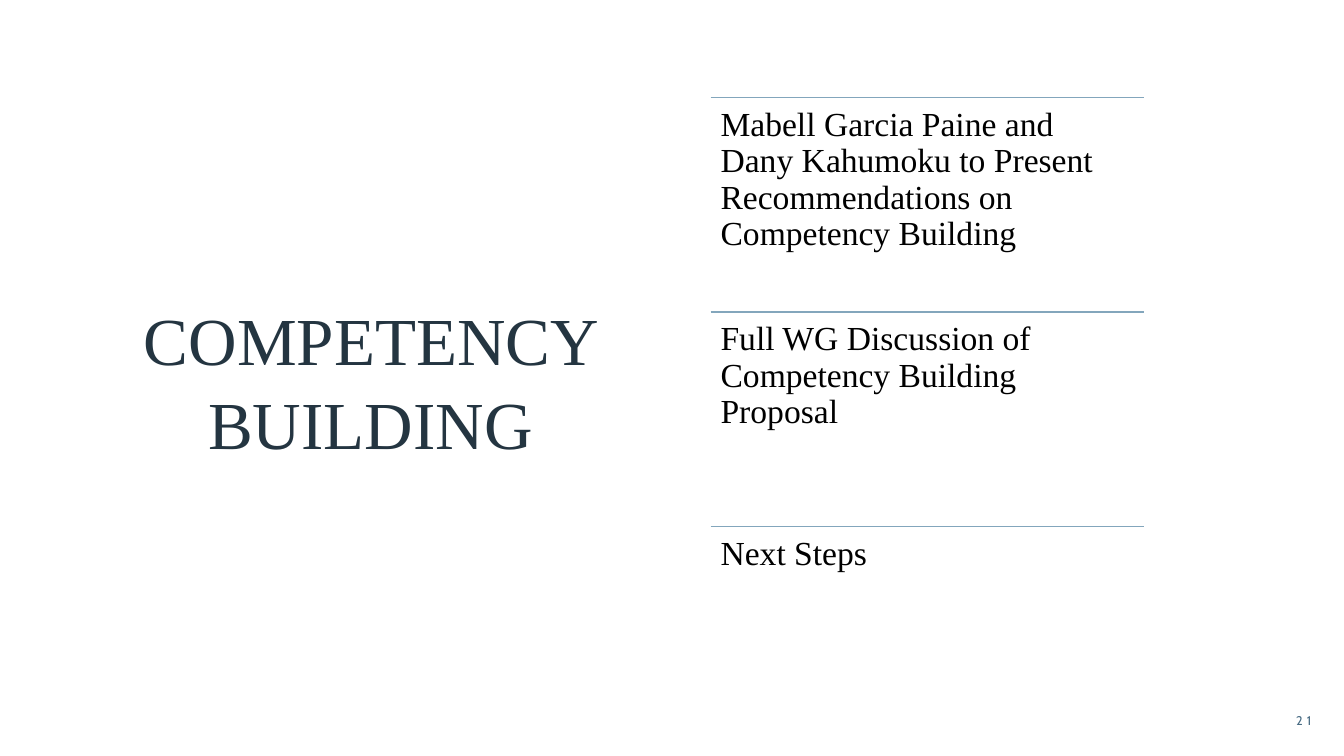
from pptx import Presentation
from pptx.dml.color import RGBColor
from pptx.enum.shapes import MSO_CONNECTOR
from pptx.enum.text import MSO_ANCHOR, MSO_AUTO_SIZE, PP_ALIGN
from pptx.oxml.ns import qn
from pptx.util import Cm, Pt
from lxml import etree

LINE = MSO_CONNECTOR.STRAIGHT
TOP, MIDDLE = MSO_ANCHOR.TOP, MSO_ANCHOR.MIDDLE
LEFT, CENTER, RIGHT = PP_ALIGN.LEFT, PP_ALIGN.CENTER, PP_ALIGN.RIGHT
NO_FIT = MSO_AUTO_SIZE.NONE
SERIF, SANS = "Times New Roman", "Cabin"

TITLE = "COMPETENCY BUILDING"
ITEMS = [
    "Mabell Garcia Paine and Dany Kahumoku to Present "
    "Recommendations on Competency Building",
    "Full WG Discussion of Competency Building Proposal",
    "Next Steps",
]

# Agenda column, in cm
LIST_X, LIST_Y, LIST_W, STEP = 17.91, 2.46, 10.92, 5.4


def color(code):
    return RGBColor.from_string(code)


def write(shape, text, size, font, code, align, anchor):
    """Fill a shape with one paragraph and return the paragraph and run."""
    frame = shape.text_frame
    frame.word_wrap = True
    frame.auto_size = NO_FIT
    frame.vertical_anchor = anchor
    para = frame.paragraphs[0]
    para.alignment = align
    run = para.add_run()
    run.text = text
    run.font.size = Pt(size)
    run.font.name = font
    run.font.color.rgb = color(code)
    return para, run


def add_title(slide):
    title = slide.shapes.title
    title.left, title.top = Cm(0.76), Cm(2.77)
    title.width, title.height = Cm(17.15), Cm(13.54)
    para, _ = write(title, TITLE, 48, SERIF, "243541", CENTER, MIDDLE)
    para.space_before = Pt(10)
    para.line_spacing = 1.05


def add_rule(slide, y):
    rule = slide.shapes.add_connector(
        LINE, Cm(LIST_X), Cm(y), Cm(LIST_X + LIST_W), Cm(y))
    rule.line.color.rgb = color("83A6BC")
    rule.line.width = Pt(1)
    etree.SubElement(rule.element.spPr, qn("a:effectLst"))


def add_item(slide, text, y):
    add_rule(slide, y)
    box = slide.shapes.add_textbox(Cm(LIST_X), Cm(y), Cm(LIST_W), Cm(STEP))
    frame = box.text_frame
    frame.margin_left = frame.margin_right = Cm(0.25)
    frame.margin_top = frame.margin_bottom = Cm(0.25)
    para, _ = write(box, text, 24, SERIF, "000000", LEFT, TOP)
    para.line_spacing = 0.9


def add_number(slide, text):
    box = slide.shapes.add_textbox(Cm(30.89), Cm(17.65), Cm(2.41), Cm(1.02))
    _, run = write(box, text, 9, SANS, "486B83", RIGHT, MIDDLE)
    run.font._element.set("spc", "300")  # 3 pt letter spacing


def main():
    deck = Presentation()
    deck.slide_width, deck.slide_height = Cm(33.87), Cm(19.05)
    slide = deck.slides.add_slide(deck.slide_layouts.get_by_name("Title Only"))

    # Heading on the left
    add_title(slide)

    # Agenda on the right
    for i, text in enumerate(ITEMS):
        add_item(slide, text, LIST_Y + i * STEP)

    # Page number
    add_number(slide, "21")

    deck.save("out.pptx")


if __name__ == "__main__":
    main()
